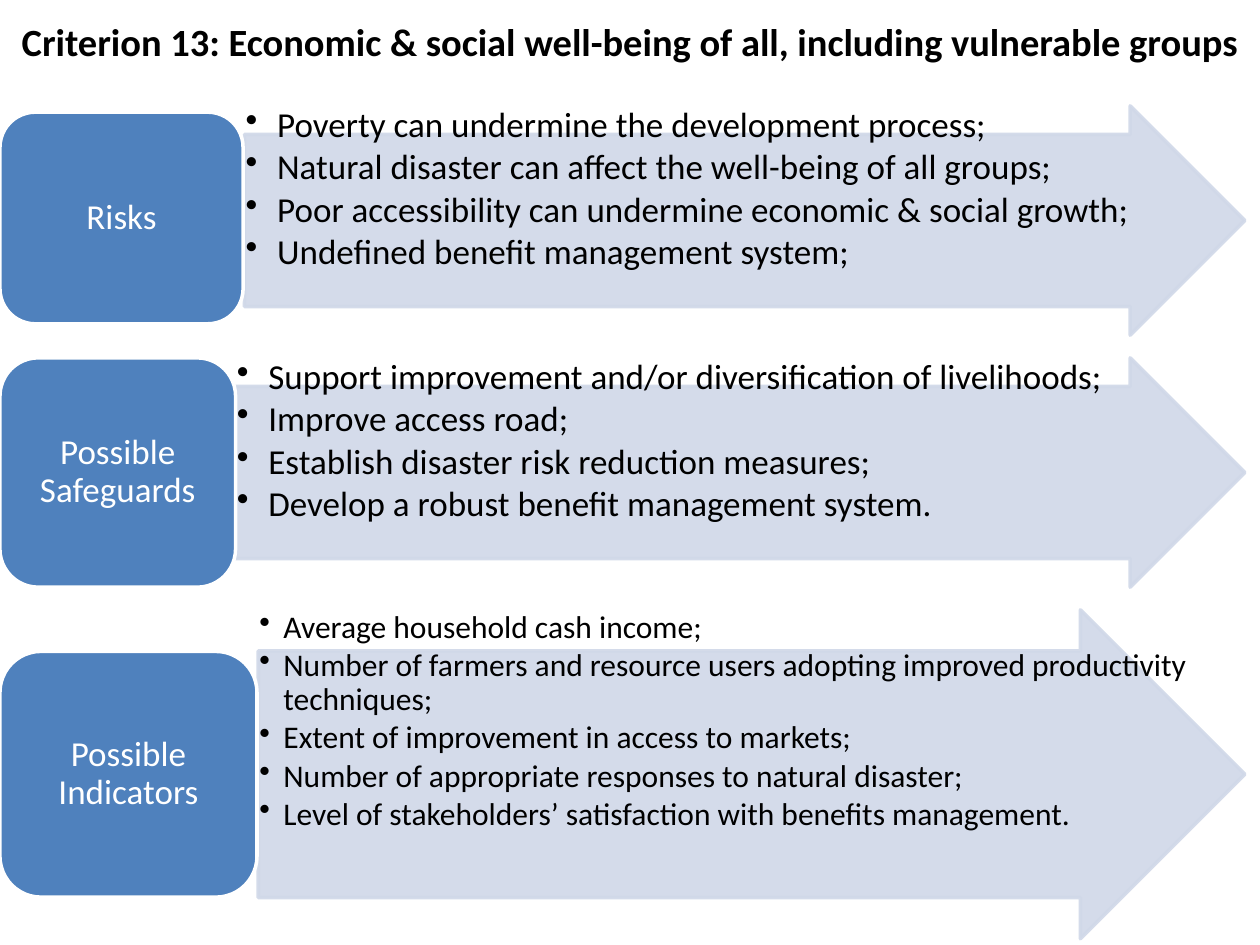
import pptx
import pptx.dml.color
import pptx.enum.shapes
import pptx.enum.text
import pptx.oxml
import pptx.util
from pptx.util import Inches

RGBColor = pptx.dml.color.RGBColor
Shape = pptx.enum.shapes.MSO_SHAPE
Anchor = pptx.enum.text.MSO_ANCHOR
Align = pptx.enum.text.PP_ALIGN

BLACK = RGBColor(0x00, 0x00, 0x00)
WHITE = RGBColor(0xFF, 0xFF, 0xFF)
BLUE = RGBColor(0x4F, 0x81, 0xBD)
PALE_BLUE = RGBColor(0xD0, 0xD8, 0xE8)


def write(shape, lines, size=20, color=BLACK, bold=False, align=Align.LEFT,
          anchor=Anchor.MIDDLE, margins=(0.1, 0.05), spacing=0.9, after=0, indent=0):
    """Fill a shape with paragraphs; a positive indent makes them bullets."""
    frame = shape.text_frame
    frame.word_wrap = True
    frame.vertical_anchor = anchor
    frame.margin_left = frame.margin_right = Inches(margins[0])
    frame.margin_top = frame.margin_bottom = Inches(margins[1])
    for number, line in enumerate(lines):
        paragraph = frame.add_paragraph() if number else frame.paragraphs[0]
        paragraph.alignment = align
        paragraph.line_spacing = spacing
        paragraph.space_after = pptx.util.Pt(after)
        run = paragraph.add_run()
        run.text = line
        run.font.name = "Calibri"
        run.font.size = pptx.util.Pt(size)
        run.font.bold = bold
        run.font.color.rgb = color
        if indent:
            properties = paragraph._p.get_or_add_pPr()
            properties.set("marL", str(Inches(indent)))
            properties.set("indent", str(-Inches(indent)))
            properties.append(pptx.oxml.parse_xml(
                '<a:buChar xmlns:a="http://schemas.openxmlformats.org/drawingml/2006/main" char="•"/>'))


class CriterionSlide:
    """Holds the slide and the style of its parts."""

    def __init__(self, deck):
        self.slide = deck.slides.add_slide(deck.slide_layouts[6])

    def text_box(self, bounds, lines, **style):
        box = self.slide.shapes.add_textbox(*map(Inches, bounds))
        write(box, lines, **style)

    def block(self, preset, bounds, fill, line):
        block = self.slide.shapes.add_shape(preset, *map(Inches, bounds))
        block.shadow.inherit = False
        block.fill.solid()
        block.fill.fore_color.rgb = fill
        block.line.color.rgb = line
        block.line.width = pptx.util.Pt(2)
        return block

    def arrow(self, bounds, points, size, indent):
        arrow = self.block(Shape.RIGHT_ARROW, bounds, PALE_BLUE, PALE_BLUE)
        arrow.adjustments[0] = 0.75
        arrow.adjustments[1] = 0.5
        # Slight transparency of fill and outline
        for color in arrow._element.spPr.xpath(".//a:srgbClr"):
            color.append(pptx.oxml.parse_xml(
                '<a:alpha xmlns:a="http://schemas.openxmlformats.org/drawingml/2006/main" val="90000"/>'))
        self.text_box(bounds, points, size=size, indent=indent, after=round(size * 0.135, 1),
                      anchor=Anchor.TOP, margins=(0.01, 0.01))

    def label(self, bounds, caption):
        label = self.block(Shape.ROUNDED_RECTANGLE, bounds, BLUE, WHITE)
        write(label, [caption], color=WHITE, align=Align.CENTER, margins=(0.08, 0.04))


# Caption, label (top, width, height), arrow (left, top, height), text size, indent, points
ARROW_TIP = 9.88
SECTIONS = [
    ("Risks", (0.89, 1.93, 1.68), (1.94, 0.84, 1.82), 20, 0.25, [
        "Poverty can undermine the development process;",
        "Natural disaster can affect the well-being of all groups;",
        "Poor accessibility can undermine economic & social growth;",
        "Undefined benefit management system;",
    ]),
    ("Possible Safeguards", (2.84, 1.87, 1.82), (1.87, 2.84, 1.82), 20, 0.25, [
        "Support improvement and/or diversification of livelihoods;",
        "Improve access road;",
        "Establish disaster risk reduction measures;",
        "Develop a robust benefit management system.",
    ]),
    ("Possible Indicators", (5.17, 2.04, 1.95), (2.05, 4.84, 2.61), 18, 0.19, [
        "Average household cash income;",
        "Number of farmers and resource users adopting improved productivity techniques;",
        "Extent of improvement in access to markets;",
        "Number of appropriate responses to natural disaster;",
        "Level of stakeholders’ satisfaction with benefits management.",
    ]),
]


def main():
    deck = pptx.Presentation()
    deck.slide_width = Inches(10)
    deck.slide_height = Inches(7.5)
    criterion = CriterionSlide(deck)

    # Title
    criterion.text_box(
        (0, -0.03, 10, 0.71),
        ["Criterion 13: Economic & social well-being of all, including vulnerable groups"],
        size=22, bold=True, align=Align.CENTER, spacing=1.0)

    # One arrow of points and one label per section
    for caption, label, (left, top, height), size, indent, points in SECTIONS:
        criterion.arrow((left, top, ARROW_TIP - left, height), points, size, indent)
        criterion.label((0, *label), caption)

    deck.save("out.pptx")


if __name__ == "__main__":
    main()
